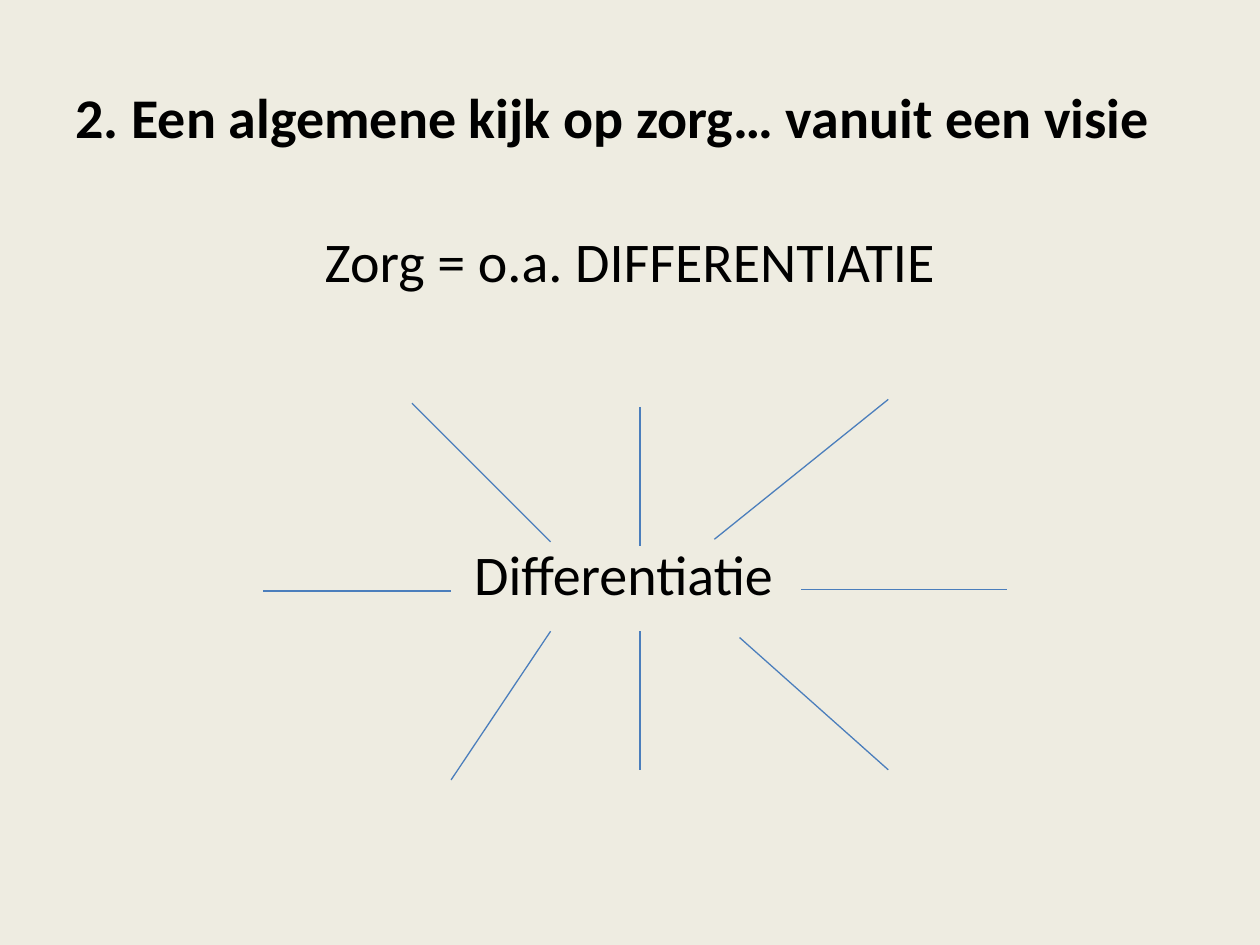
from lxml.etree import SubElement
from pptx import Presentation
from pptx.dml.color import RGBColor
from pptx.enum.shapes import MSO_CONNECTOR
from pptx.enum.text import MSO_ANCHOR, PP_ALIGN
from pptx.oxml.ns import qn
from pptx.util import Inches, Pt

COLORS = {"background": "EEECE1", "text": "000000", "ray": "4B7EBC"}
TITLE = "2. Een algemene kijk op zorg… vanuit een visie"
STATEMENTS = [("Zorg = o.a. DIFFERENTIATIE", 0), ("Differentiatie ", 140)]
RAYS = [
    (3.27, 3.2, 4.37, 4.3),
    (7.05, 3.17, 5.67, 4.28),
    (5.08, 3.23, 5.08, 4.33),
    (2.09, 4.69, 3.58, 4.69),
    (4.37, 5.01, 3.58, 6.19),
    (5.08, 5.01, 5.08, 6.11),
    (5.87, 5.06, 7.05, 6.11),
    (7.99, 4.68, 6.36, 4.68),
]


def color(name):
    return RGBColor.from_string(COLORS[name])


def place(placeholder, left, top, width, height):
    placeholder.left, placeholder.top = Inches(left), Inches(top)
    placeholder.width, placeholder.height = Inches(width), Inches(height)


def write(paragraph, text, align, bold=False):
    paragraph.text = text
    paragraph.alignment = align
    paragraph.font.name = "Calibri"
    paragraph.font.size = Pt(32)
    paragraph.font.bold = bold
    paragraph.font.color.rgb = color("text")


def add_ray(slide, ends):
    ray = slide.shapes.add_connector(MSO_CONNECTOR.STRAIGHT, *map(Inches, ends))
    ray.line.color.rgb = color("ray")
    ray.line.width = Pt(0.75)
    SubElement(ray._element.spPr, qn("a:effectLst"))


def main():
    """Build the slide on care as differentiation."""
    deck = Presentation()
    deck.slide_width, deck.slide_height = Inches(10), Inches(7.5)
    slide = deck.slides.add_slide(deck.slide_layouts[1])
    slide.background.fill.solid()
    slide.background.fill.fore_color.rgb = color("background")

    title, body = slide.placeholders
    place(title, 0.5, 0.3, 9, 1.25)
    title.text_frame.vertical_anchor = MSO_ANCHOR.MIDDLE
    write(title.text_frame.paragraphs[0], TITLE, PP_ALIGN.LEFT, bold=True)

    place(body, 0.5, 1.75, 9, 4.95)
    body.text_frame.text = "\n".join(text for text, _ in STATEMENTS)
    for paragraph, (text, gap) in zip(body.text_frame.paragraphs, STATEMENTS):
        write(paragraph, text, PP_ALIGN.CENTER)
        paragraph.space_before = Pt(gap)
        properties = paragraph._p.get_or_add_pPr()
        properties.set("marL", "0")
        properties.set("indent", "0")
        properties.insert_element_before(
            properties.makeelement(qn("a:buNone"), {}), "a:tabLst", "a:defRPr", "a:extLst"
        )

    for ends in RAYS:
        add_ray(slide, ends)
    deck.save("out.pptx")


if __name__ == "__main__":
    main()
